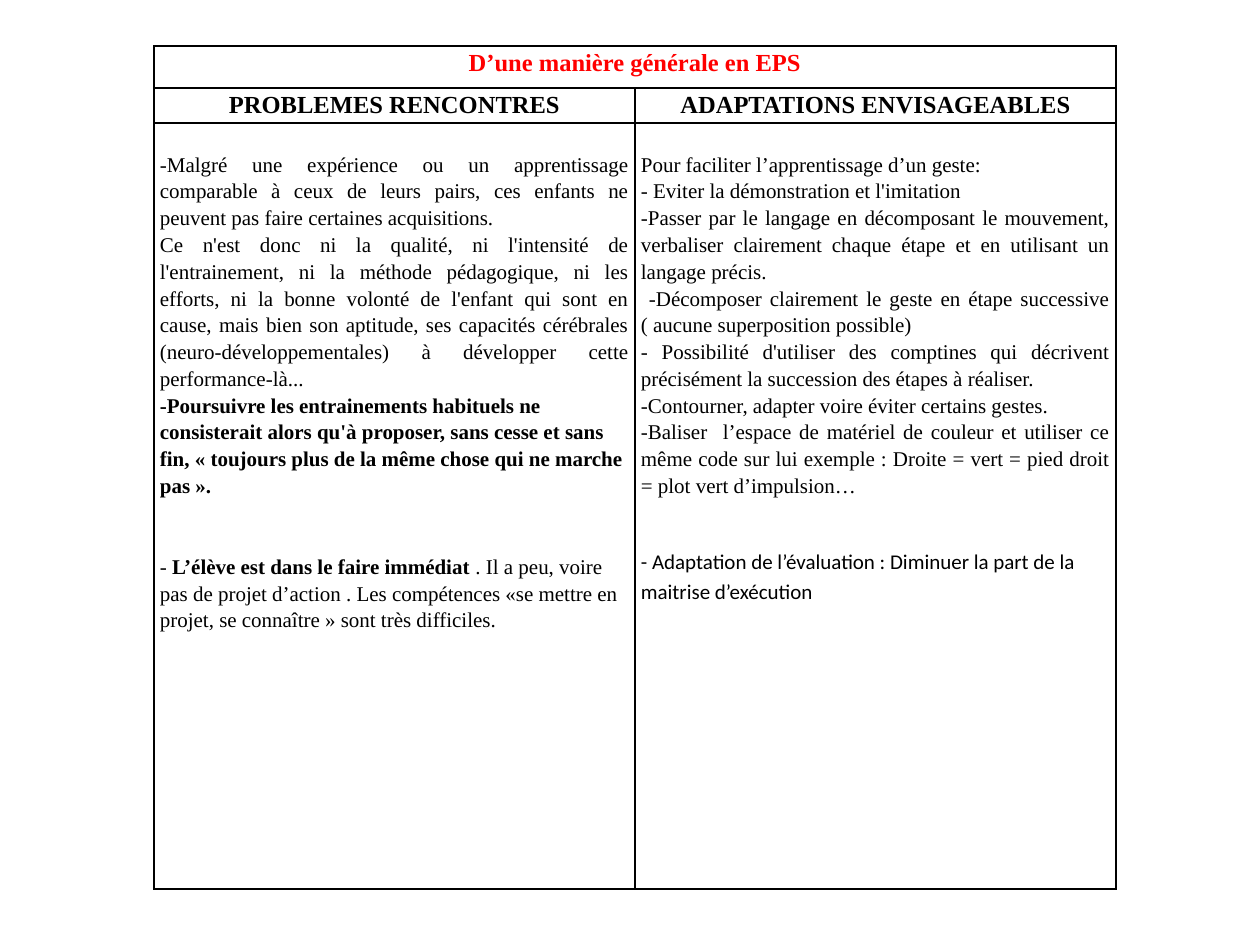
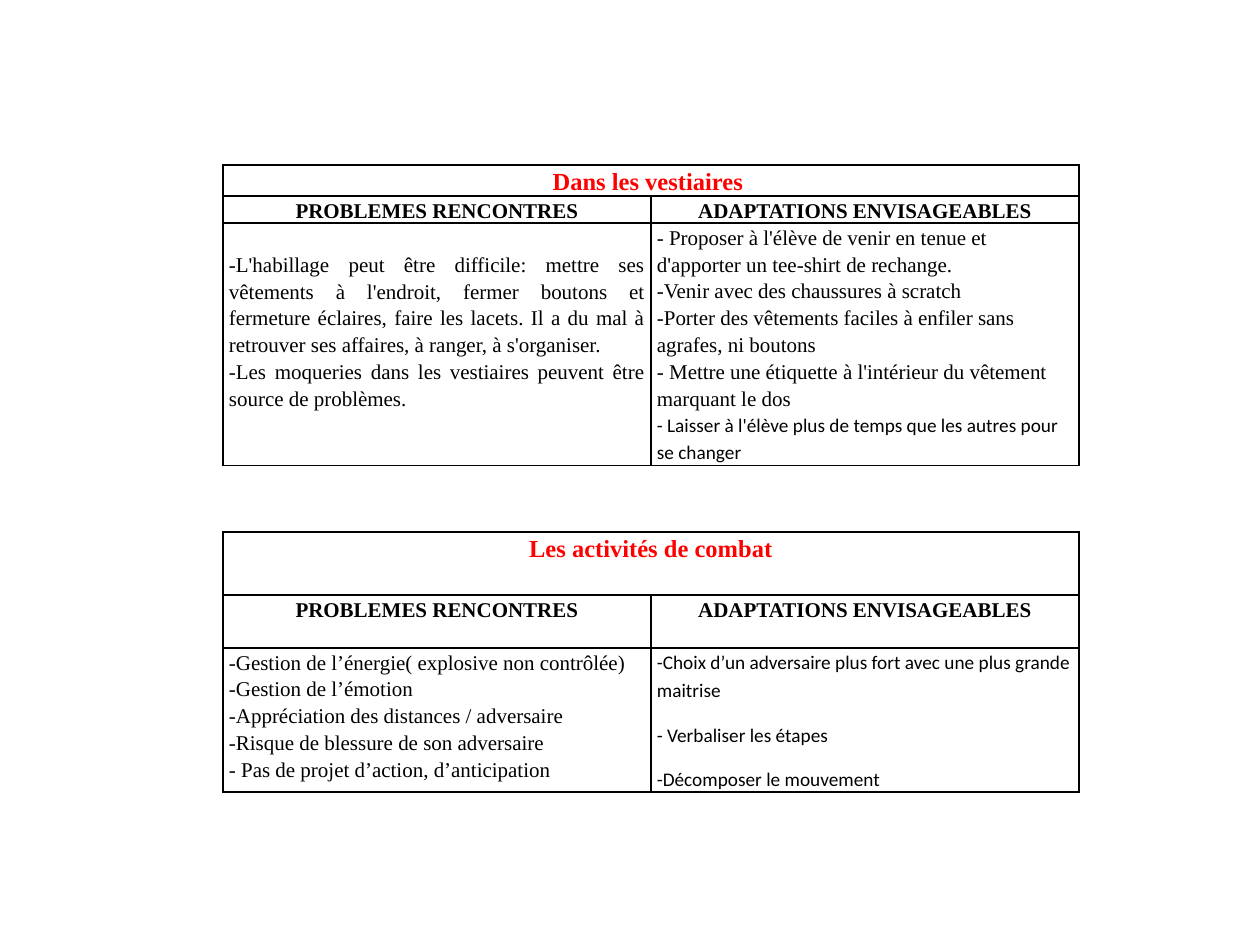
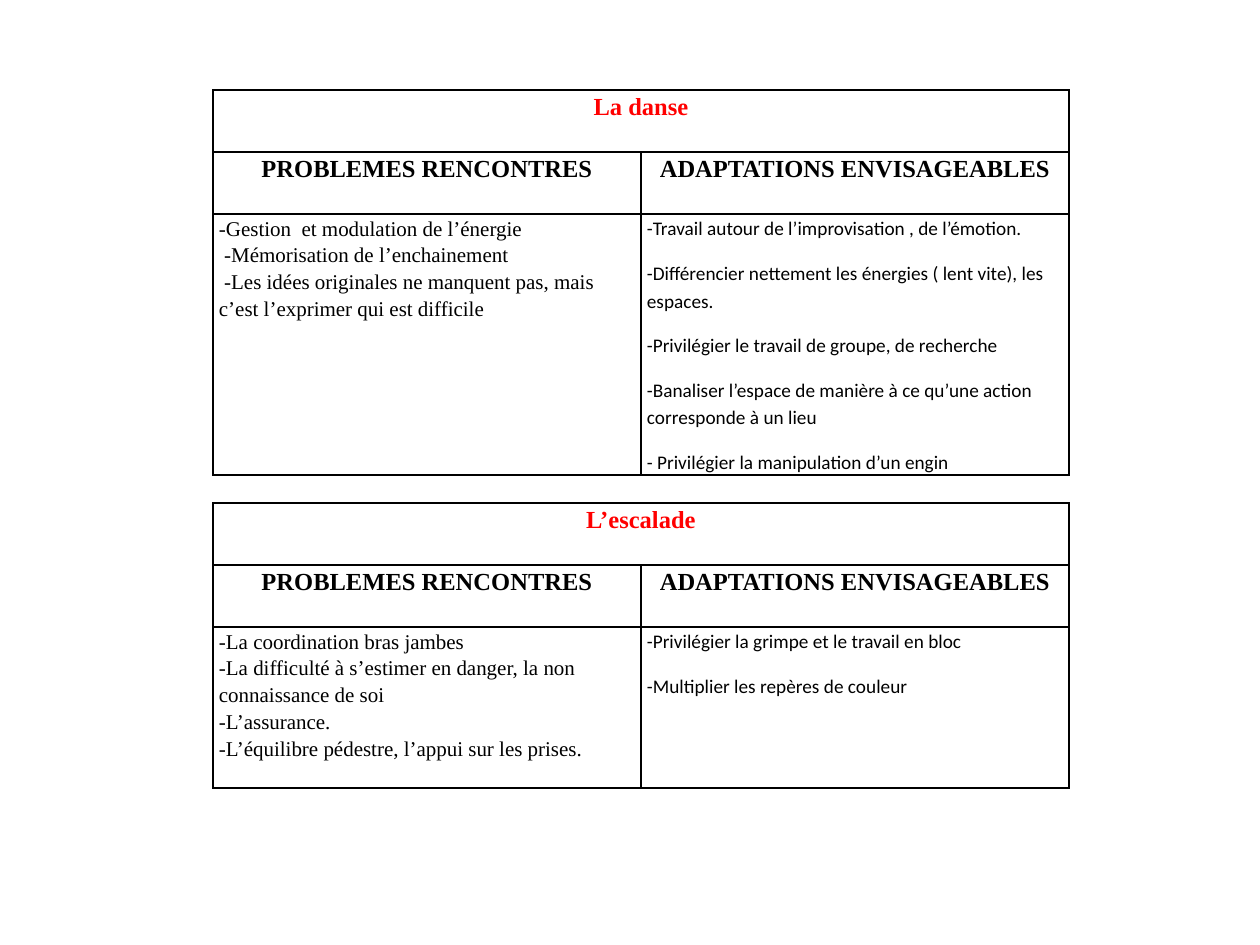
from pptx import Presentation
from pptx import util as u
from pptx.dml.color import RGBColor
from pptx.enum import text
from lxml import etree

PX = 914400 / 126
BLACK, RED = "000000", "FF0000"
SERIF, SANS = "Times New Roman", "Calibri"
LEFT, CENTER, JUSTIFY = text.PP_ALIGN.LEFT, text.PP_ALIGN.CENTER, text.PP_ALIGN.JUSTIFY
HEADINGS = ["PROBLEMES RENCONTRES", "ADAPTATIONS ENVISAGEABLES"]
INSET = 6
BORDER = 12700
A = "http://schemas.openxmlformats.org/drawingml/2006/main"

# style: font, size, bold, colour, alignment, space after (pt), space before (px)
STYLES = {
    "title": (SERIF, 14, True, RED, CENTER, 0, 0),
    "heading": (SERIF, 14, True, BLACK, CENTER, 0, 0),
    "small heading": (SERIF, 12, True, BLACK, CENTER, 0, 0),
    "justified": (SERIF, 12, False, BLACK, JUSTIFY, 0, 0),
    "plain": (SERIF, 12, False, BLACK, LEFT, 0, 0),
    "strong": (SERIF, 12, True, BLACK, LEFT, 0, 0),
    "spaced": (SERIF, 12, False, BLACK, LEFT, 0, 54),
    "note": (SANS, 11, False, BLACK, LEFT, 10, 0),
    "spaced note": (SANS, 12, False, BLACK, LEFT, 10, 48),
}

SLIDES = [
    [
        {
            "at": (154, 46), "column": 481, "rows": (42, 35, 766), "heading": "heading",
            "title": "D’une manière générale en EPS", "gaps": (27, 27),
            "problems": [
                ("justified", "-Malgré une expérience ou un apprentissage comparable à ceux de leurs pairs, ces enfants ne peuvent pas faire certaines acquisitions. "),
                ("justified", "Ce n'est donc ni la qualité, ni l'intensité de l'entrainement, ni la méthode pédagogique, ni les efforts, ni la bonne volonté de l'enfant qui sont en cause, mais bien son aptitude, ses capacités cérébrales (neuro-développementales) à développer cette performance-là..."),
                ("strong", "-Poursuivre les entrainements habituels ne consisterait alors qu'à proposer, sans cesse et sans fin, « toujours plus de la même chose qui ne marche pas »."),
                ("spaced", "- *L’élève est dans le faire immédiat* . Il a peu, voire pas de projet d’action . Les compétences «se mettre en projet, se connaître » sont très difficiles."),
            ],
            "adaptations": [
                ("justified", "Pour faciliter l’apprentissage d’un geste:"),
                ("justified", "- Eviter la démonstration et l'imitation "),
                ("justified", "-Passer par le langage en décomposant le mouvement, verbaliser clairement chaque étape et en utilisant un langage précis."),
                ("justified", " -Décomposer clairement le geste en étape successive ( aucune superposition possible)"),
                ("justified", "- Possibilité d'utiliser des comptines qui décrivent précisément la succession des étapes à réaliser."),
                ("justified", "-Contourner, adapter voire éviter certains gestes."),
                ("justified", "-Baliser  l’espace de matériel de couleur et utiliser ce même code sur lui exemple : Droite = vert = pied droit = plot vert d’impulsion…"),
                ("spaced note", "- Adaptation de l’évaluation : Diminuer la part de la maitrise d’exécution"),
            ],
        },
    ],
    [
        {
            "at": (223, 165), "column": 428, "rows": (31, 27, 242), "heading": "small heading",
            "title": "Dans les vestiaires ", "gaps": (27, 0),
            "problems": [
                ("justified", "-L'habillage peut être difficile: mettre ses vêtements à l'endroit, fermer boutons et fermeture éclaires, faire les lacets. Il a du mal à retrouver ses affaires, à ranger, à s'organiser. "),
                ("justified", "-Les moqueries dans les vestiaires peuvent être source de problèmes."),
            ],
            "adaptations": [
                ("plain", "- Proposer à l'élève de venir en tenue et d'apporter un tee-shirt de rechange."),
                ("plain", "-Venir avec des chaussures à scratch"),
                ("plain", "-Porter des vêtements faciles à enfiler sans agrafes, ni boutons"),
                ("plain", "- Mettre une étiquette à l'intérieur du vêtement marquant le dos"),
                ("note", "- Laisser à l'élève plus de temps que les autres pour se changer"),
            ],
        },
        {
            "at": (223, 532), "column": 428, "rows": (63, 53, 144), "heading": "small heading",
            "title": "Les activités de combat", "gaps": (0, 0),
            "problems": [
                ("plain", "-Gestion de l’énergie( explosive non contrôlée)"),
                ("plain", "-Gestion de l’émotion"),
                ("plain", "-Appréciation des distances / adversaire"),
                ("plain", "-Risque de blessure de son adversaire"),
                ("plain", "- Pas de projet d’action, d’anticipation"),
            ],
            "adaptations": [
                ("note", "-Choix d’un adversaire plus fort avec une plus grande maitrise"),
                ("note", "- Verbaliser les étapes"),
                ("note", "-Décomposer le mouvement"),
            ],
        },
    ],
    [
        {
            "at": (213, 90), "column": 428, "rows": (62, 62, 261), "heading": "heading",
            "title": "La danse", "gaps": (0, 0),
            "problems": [
                ("plain", "-Gestion  et modulation de l’énergie"),
                ("plain", " -Mémorisation de l’enchainement"),
                ("plain", " -Les idées originales ne manquent pas, mais c’est l’exprimer qui est difficile"),
            ],
            "adaptations": [
                ("note", "-Travail autour de l’improvisation , de l’émotion."),
                ("note", "-Différencier nettement les énergies ( lent vite), les espaces."),
                ("note", "-Privilégier le travail de groupe, de recherche "),
                ("note", "-Banaliser l’espace de manière à ce qu’une action corresponde à un lieu"),
                ("note", "- Privilégier la manipulation d’un engin"),
            ],
        },
        {
            "at": (213, 503), "column": 428, "rows": (62, 62, 161), "heading": "heading",
            "title": "L’escalade", "gaps": (0, 0),
            "problems": [
                ("plain", "-La coordination bras jambes"),
                ("plain", "-La difficulté à s’estimer en danger, la non connaissance de soi"),
                ("plain", "-L’assurance."),
                ("plain", "-L’équilibre pédestre, l’appui sur les prises."),
            ],
            "adaptations": [
                ("note", "-Privilégier la grimpe et le travail en bloc"),
                ("note", "-Multiplier les repères de couleur"),
            ],
        },
    ],
]


def px(length):
    return u.Emu(round(length * PX))


def colour(value):
    return RGBColor.from_string(value)


def add_borders(cell):
    properties = cell._tc.get_or_add_tcPr()
    for index, side in enumerate(("lnL", "lnR", "lnT", "lnB")):
        line = etree.Element(f"{{{A}}}{side}", w=str(BORDER))
        fill = etree.SubElement(line, f"{{{A}}}solidFill")
        etree.SubElement(fill, f"{{{A}}}srgbClr", val=BLACK)
        properties.insert(index, line)


def write_paragraph(para, style, wording):
    font, size, bold, shade, align, after, before = STYLES[style]
    para.alignment = align
    para.line_spacing = 1.15
    para.space_after = u.Pt(after)
    para.space_before = px(before)
    para.font.name = font
    para.font.size = u.Pt(size)
    para.font.bold = bold
    para.font.color.rgb = colour(shade)
    for index, part in enumerate(wording.split("*")):
        span = para.add_run()
        span.text = part
        if index % 2:
            span.font.bold = True


def fill_cell(cell, paragraphs, gap=0):
    cell.margin_left = cell.margin_right = px(INSET)
    cell.margin_top, cell.margin_bottom = px(gap), 0
    frame = cell.text_frame
    for index, (style, wording) in enumerate(paragraphs):
        para = frame.add_paragraph() if index else frame.paragraphs[0]
        write_paragraph(para, style, wording)


def add_activity(page, activity):
    left, top = activity["at"]
    heights, width = activity["rows"], activity["column"]
    table = page.shapes.add_table(
        3, 2, px(left), px(top), px(2 * width), px(sum(heights))).table
    table.first_row = table.horz_banding = False
    for column in table.columns:
        column.width = px(width)
    for row, height in zip(table.rows, heights):
        row.height = px(height)
        for cell in row.cells:
            cell.fill.background()
            add_borders(cell)
    table.cell(0, 0).merge(table.cell(0, 1))
    fill_cell(table.cell(0, 0), [("title", activity["title"])])
    bodies = activity["problems"], activity["adaptations"]
    for index, (heading, body, gap) in enumerate(zip(HEADINGS, bodies, activity["gaps"])):
        fill_cell(table.cell(1, index), [(activity["heading"], heading)])
        fill_cell(table.cell(2, index), body, gap)


def main():
    deck = Presentation()
    deck.slide_width, deck.slide_height = px(1260), px(945)
    for activities in SLIDES:
        page = deck.slides.add_slide(deck.slide_layouts[6])
        for activity in activities:
            add_activity(page, activity)
    deck.save("out.pptx")


if __name__ == "__main__":
    main()
